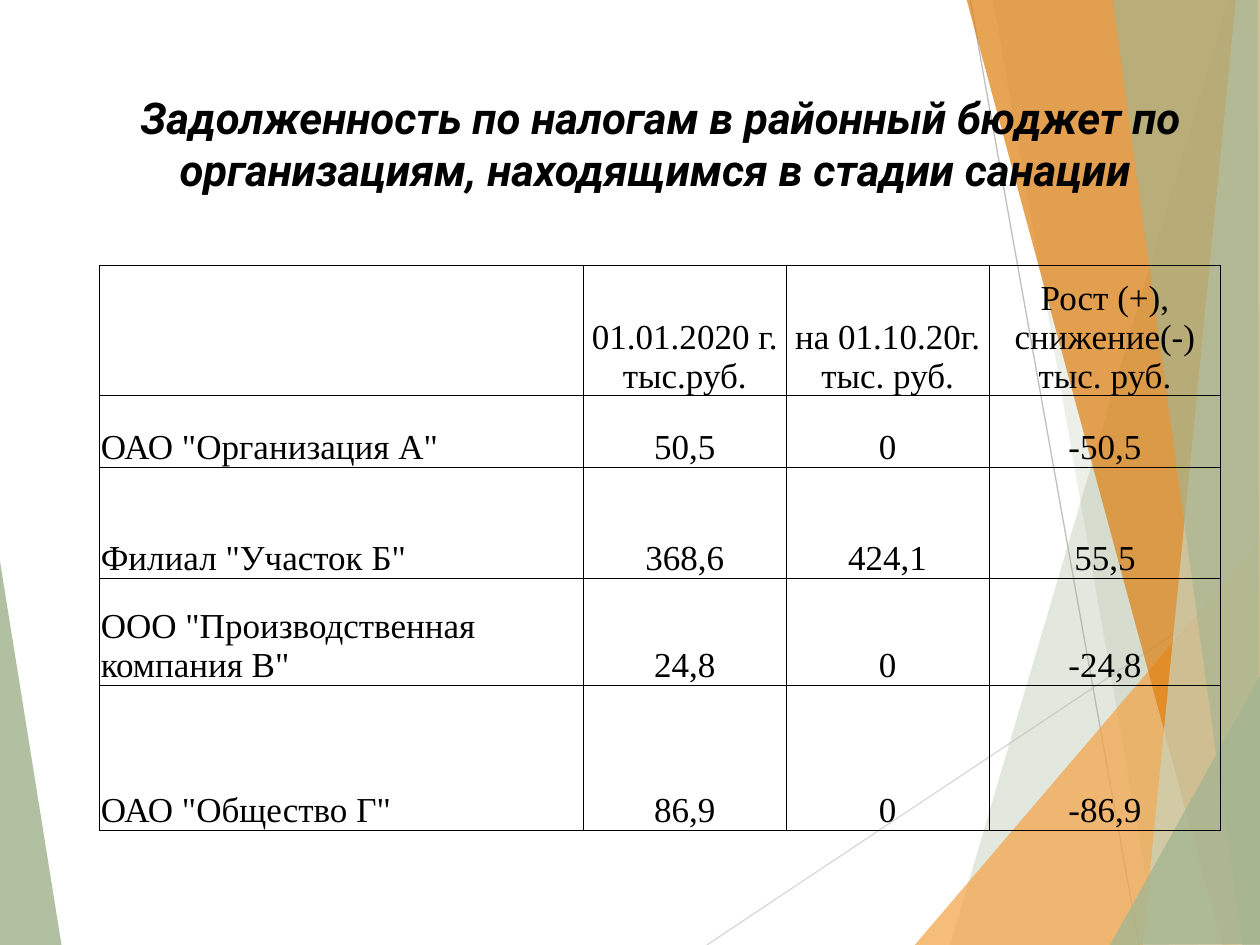
from dataclasses import dataclass

from lxml.etree import SubElement
from pptx import Presentation
from pptx.dml.color import RGBColor
from pptx.enum.shapes import MSO_CONNECTOR
from pptx.enum.text import MSO_ANCHOR, MSO_AUTO_SIZE, PP_ALIGN
from pptx.oxml.ns import qn
from pptx.util import Inches, Pt


@dataclass(frozen=True)
class Theme:
    text: str = "000000"
    sage: str = "A5B592"
    pale_sage: str = "C9D3BE"
    amber: str = "F3A447"
    orange: str = "DD7E0E"
    light_line: str = "D9D9D9"
    grey_line: str = "BFBFBF"
    title_font: str = "Roboto"
    table_font: str = "Times New Roman"
    title_size: int = 25
    table_size: int = 20
    thin: float = 0.75
    border: float = 0.5


THEME = Theme()

# Background rays: from, to, colour
RAYS = [
    ((5.61, 7.5), (10.01, 4.57), THEME.light_line),
    ((7.7, 0), (9.04, 7.5), THEME.grey_line),
]

# Background facets: corners, colour, opacity in percent
LEFT_FACET = ([(-0.01, 4.39), (0.49, 7.51), (-0.01, 7.5)], THEME.sage, 85)
RIGHT_FACETS = [
    ([(9.75, 0), (7.54, 7.5), (10.02, 7.51), (10.01, 0)], THEME.sage, 30),
    ([(7.88, -0.01), (9.19, 7.5), (10.01, 7.5), (10.01, -0.01)], THEME.sage, 20),
    ([(7.26, 7.5), (10, 4.29), (10.01, 7.5)], THEME.amber, 72),
    ([(7.67, -0.01), (9.7, 7.5), (10.01, 7.49), (10.01, -0.01)], THEME.orange, 70),
    ([(9.81, -0.01), (9.07, 7.5), (10.01, 7.5), (10, -0.01)], THEME.pale_sage, 70),
    ([(8.83, -0.01), (9.86, 7.5), (10, 7.5), (9.98, -0.01)], THEME.sage, 65),
    ([(8.81, 7.5), (10.01, 5.35), (10.01, 7.49)], THEME.sage, 80),
]

TITLE = ("Задолженность по налогам в районный бюджет по организациям, "
         "находящимся в стадии санации ")
COLUMN_WIDTHS = [3.84, 1.61, 1.61, 1.84]
ROW_HEIGHTS = [1.03, 0.57, 0.88, 0.85, 1.15]
DEBTS = [
    ["", "01.01.2020 г. тыс.руб.", "на 01.10.20г. тыс. руб.",
     "Рост (+), снижение(-) тыс. руб."],
    ['ОАО "Организация А"', "50,5", "0", "-50,5"],
    ['Филиал "Участок Б"', "368,6", "424,1", "55,5"],
    ['ООО "Производственная компания В"', "24,8", "0", "-24,8"],
    ['ОАО "Общество Г"', "86,9", "0", "-86,9"],
]


def add_ray(slide, start, end, color):
    ray = slide.shapes.add_connector(
        MSO_CONNECTOR.STRAIGHT, *(Inches(value) for value in start + end))
    ray.line.color.rgb = RGBColor.from_string(color)
    ray.line.width = Pt(THEME.thin)
    SubElement(ray.element.spPr, qn("a:effectLst"))


def add_facet(slide, corners, color, opacity):
    points = [(Inches(x), Inches(y)) for x, y in corners]
    builder = slide.shapes.build_freeform(*points[0])
    builder.add_line_segments(points[1:], close=True)
    facet = builder.convert_to_shape()
    facet.shadow.inherit = False
    facet.line.fill.background()
    facet.fill.solid()
    facet.fill.fore_color.rgb = RGBColor.from_string(color)
    tint = facet.element.spPr.find(qn("a:solidFill"))[0]
    SubElement(tint, qn("a:alpha"), val=str(opacity * 1000))


def add_span(para, text, font, size, emphasis=False):
    span = para.add_run()
    span.text = text
    span.font.name = font
    span.font.size = Pt(size)
    span.font.bold = span.font.italic = emphasis
    span.font.color.rgb = RGBColor.from_string(THEME.text)


def set_title(slide, text):
    title = slide.shapes.title
    title.left, title.top = Inches(0.67), Inches(0.67)
    title.width, title.height = Inches(9.14), Inches(1.44)
    frame = title.text_frame
    frame.word_wrap = True
    frame.auto_size = MSO_AUTO_SIZE.NONE
    frame.vertical_anchor = MSO_ANCHOR.TOP
    para = frame.paragraphs[0]
    para.alignment = PP_ALIGN.CENTER
    add_span(para, text, THEME.title_font, THEME.title_size, emphasis=True)
    # Bring the title in front of the background
    slide.shapes.element.append(title.element)


def add_borders(cell):
    properties = cell._tc.get_or_add_tcPr()
    for side in ("lnL", "lnR", "lnT", "lnB"):
        edge = SubElement(properties, qn(f"a:{side}"), w=str(Pt(THEME.border)))
        fill = SubElement(edge, qn("a:solidFill"))
        SubElement(fill, qn("a:srgbClr"), val=THEME.text)


def format_cell(cell, text, alignment):
    add_borders(cell)
    cell.fill.background()
    cell.vertical_anchor = MSO_ANCHOR.BOTTOM
    cell.margin_left = cell.margin_right = cell.margin_top = Inches(0.01)
    cell.margin_bottom = 0
    para = cell.text_frame.paragraphs[0]
    para.alignment = alignment
    if text:
        add_span(para, text, THEME.table_font, THEME.table_size)


def add_debt_table(slide):
    table = slide.shapes.add_table(
        len(ROW_HEIGHTS), len(COLUMN_WIDTHS), Inches(0.79), Inches(2.11),
        Inches(sum(COLUMN_WIDTHS)), Inches(sum(ROW_HEIGHTS))).table
    table.first_row = table.horz_banding = False
    for column, width in zip(table.columns, COLUMN_WIDTHS):
        column.width = Inches(width)
    for row, height, texts in zip(table.rows, ROW_HEIGHTS, DEBTS):
        row.height = Inches(height)
        for index, (cell, text) in enumerate(zip(row.cells, texts)):
            format_cell(cell, text, PP_ALIGN.CENTER if index else PP_ALIGN.LEFT)


def main():
    deck = Presentation()
    deck.slide_width, deck.slide_height = Inches(10), Inches(7.5)
    slide = deck.slides.add_slide(deck.slide_layouts[5])

    # Background
    add_facet(slide, *LEFT_FACET)
    for ray in RAYS:
        add_ray(slide, *ray)
    for facet in RIGHT_FACETS:
        add_facet(slide, *facet)

    # Content
    set_title(slide, TITLE)
    add_debt_table(slide)
    deck.save("out.pptx")


if __name__ == "__main__":
    main()
